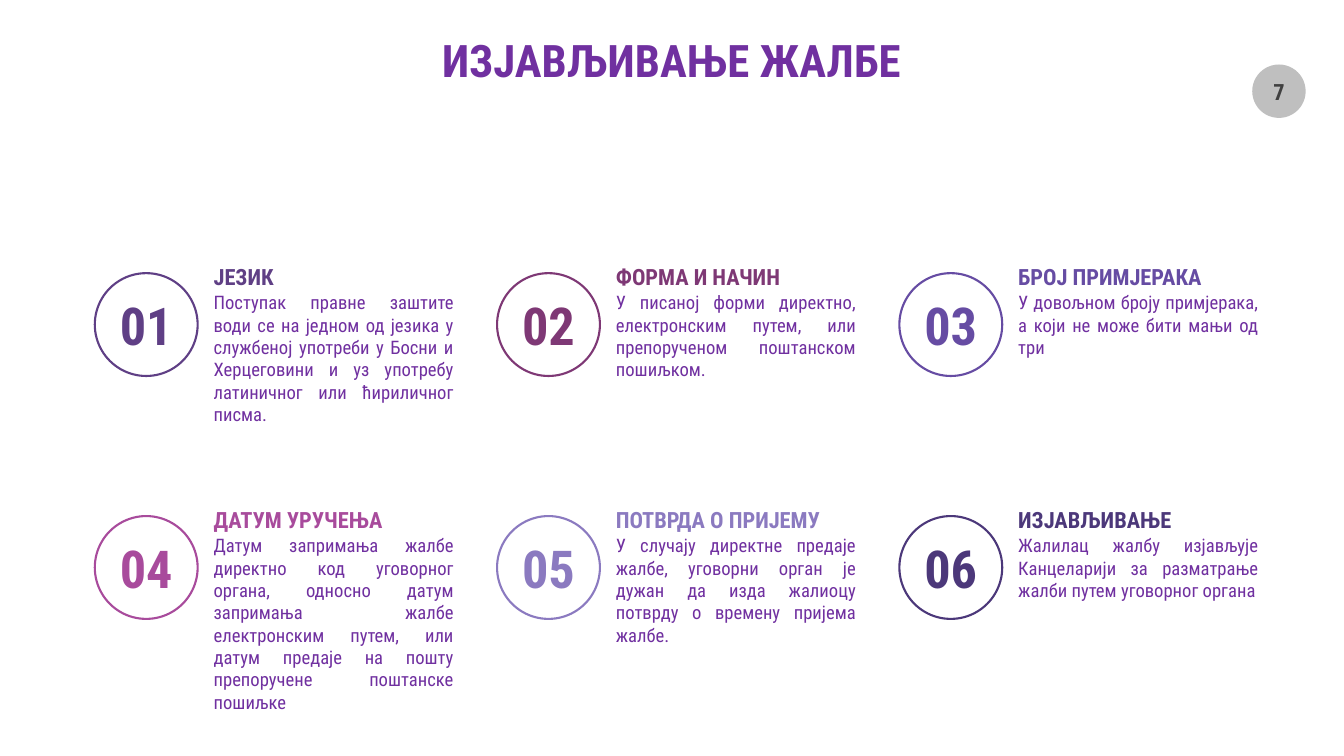
from pptx import Presentation
from pptx.dml.color import RGBColor
from pptx.enum.shapes import MSO_SHAPE
from pptx.enum.text import MSO_ANCHOR, MSO_AUTO_SIZE, PP_ALIGN
from pptx.util import Pt

PX = 9144
FONT = "Roboto Condensed"
PURPLE = RGBColor(0x70, 0x30, 0xA0)
SILVER = RGBColor(0xBF, 0xBF, 0xBF)
GREY = RGBColor(0x40, 0x40, 0x40)
PLUM = RGBColor(0x5F, 0x3F, 0x85)
WINE = RGBColor(0x7E, 0x38, 0x75)
INDIGO = RGBColor(0x66, 0x4C, 0xA3)
PINK = RGBColor(0xA8, 0x4B, 0x9C)
LILAC = RGBColor(0x8B, 0x7A, 0xC0)
NIGHT = RGBColor(0x4C, 0x38, 0x7A)

COLS = 3
LEFT, TOP = 94, 256
COL_STEP, ROW_STEP = 399, 241

STEPS = [
    ("ЈЕЗИК", PLUM,
     "Поступак правне заштите води се на једном од језика у службеној употреби "
     "у Босни и Херцеговини и уз употребу латиничног или ћириличног писма.", 145),
    ("ФОРМА И НАЧИН", WINE,
     "У писаној форми директно, електронским путем, или препорученом "
     "поштанском пошиљком.", 100),
    ("БРОЈ ПРИМЈЕРАКА", INDIGO,
     "У довољном броју примјерака, а који не може бити мањи од три", 77),
    ("ДАТУМ УРУЧЕЊА", PINK,
     "Датум запримања жалбе директно код уговорног органа, односно датум "
     "запримања жалбе електронским путем, или датум предаје на пошту "
     "препоручене поштанске пошиљке", 190),
    ("ПОТВРДА О ПРИЈЕМУ", LILAC,
     "У случају директне предаје жалбе, уговорни орган је дужан да изда "
     "жалиоцу потврду о времену пријема жалбе.", 122),
    ("ИЗЈАВЉИВАЊЕ", NIGHT,
     "Жалилац жалбу изјављује Канцеларији за разматрање жалби путем "
     "уговорног органа", 77),
]


def box(*sides):
    """Turn px lengths into EMU."""
    return [side * PX for side in sides]


def write(frame, text, size, color, bold=True, align=PP_ALIGN.CENTER):
    """Fill a text frame with one styled paragraph."""
    frame.text = text
    para = frame.paragraphs[0]
    para.alignment = align
    font = para.runs[0].font
    font.name, font.size, font.bold = FONT, Pt(size), bold
    font.color.rgb = color


def add_title(slide, text):
    """Place and style the slide title."""
    title = slide.shapes.title
    title.left, title.top, title.width, title.height = box(319, 29, 694, 61)
    frame = title.text_frame
    frame.margin_left = frame.margin_right = 0
    frame.margin_top = frame.margin_bottom = 0
    frame.vertical_anchor = MSO_ANCHOR.MIDDLE
    frame.auto_size = MSO_AUTO_SIZE.NONE
    frame.word_wrap = False
    write(frame, text, 32, PURPLE)


def add_disc(slide, left, top, size, text, points, color, fill=None):
    """Draw a circle with a number, filled or outlined."""
    disc = slide.shapes.add_shape(MSO_SHAPE.OVAL, *box(left, top, size, size))
    disc.shadow.inherit = False
    if fill is None:
        disc.fill.background()
        disc.line.color.rgb = color
        disc.line.width = Pt(1.5)
    else:
        disc.fill.solid()
        disc.fill.fore_color.rgb = fill
        disc.line.fill.background()
    frame = disc.text_frame
    frame.word_wrap = False
    frame.vertical_anchor = MSO_ANCHOR.MIDDLE
    write(frame, text, points, color)


def add_text(slide, left, top, height, text, *style):
    """Add a wrapped text box of the column's width."""
    frame = slide.shapes.add_textbox(*box(left, top, 258, height)).text_frame
    frame.word_wrap = True
    frame.auto_size = MSO_AUTO_SIZE.SHAPE_TO_FIT_TEXT
    write(frame, text, *style)


def add_step(slide, index, head, color, body, height):
    """Add a numbered step at its place in the grid."""
    row, col = divmod(index, COLS)
    left, top = LEFT + col * COL_STEP, TOP + row * ROW_STEP
    add_text(slide, left + 108, top + 28, height, body,
             13.3, PURPLE, False, PP_ALIGN.JUSTIFY)
    add_text(slide, left + 108, top, 37, head, 16, color, True, PP_ALIGN.LEFT)
    add_disc(slide, left, top + 15, 102, f"{index + 1:02}", 37.3, color)


def main():
    """Build and save the slide."""
    deck = Presentation()
    deck.slide_width, deck.slide_height = box(1333, 750)
    slide = deck.slides.add_slide(deck.slide_layouts[5])
    add_disc(slide, 1242, 64, 53, "7", 16, GREY, SILVER)
    add_title(slide, "ИЗЈАВЉИВАЊЕ ЖАЛБЕ")
    for index, step in enumerate(STEPS):
        add_step(slide, index, *step)
    deck.save("out.pptx")


if __name__ == "__main__":
    main()
